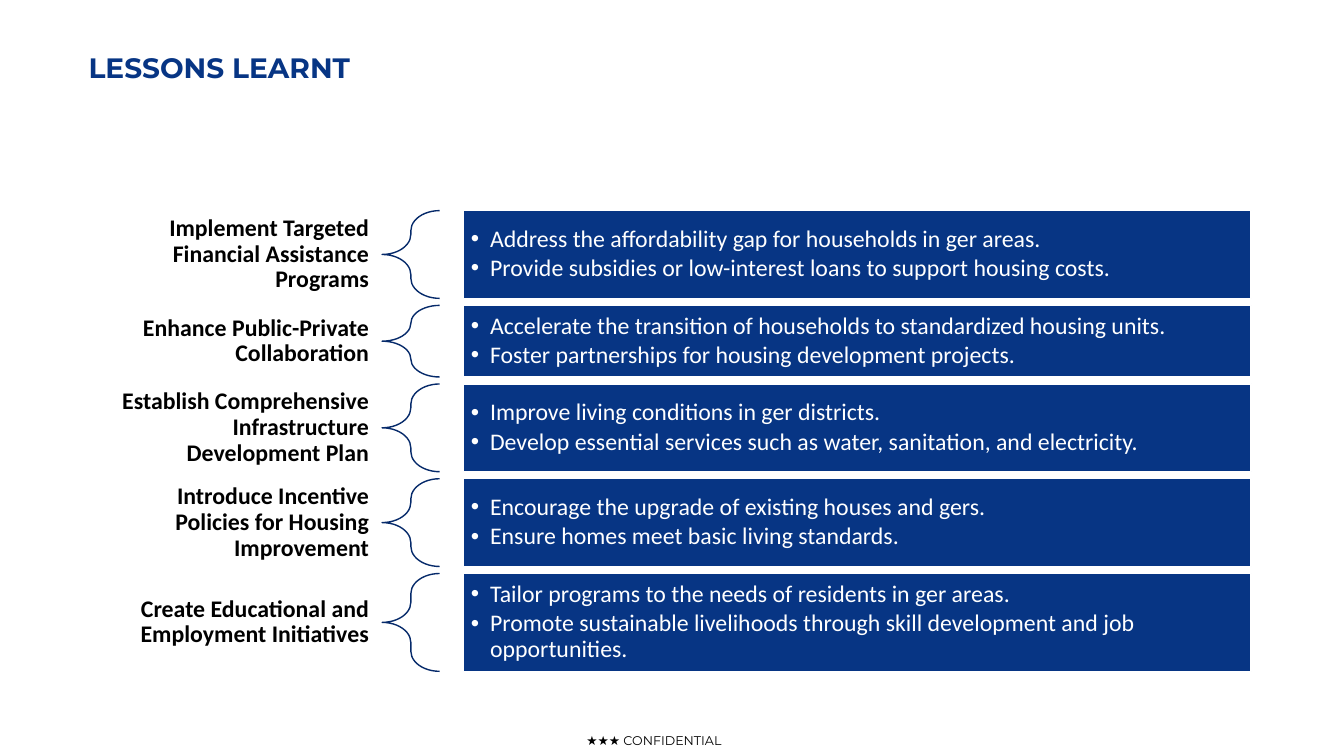
from lxml import etree
from pptx import Presentation
from pptx.dml.color import RGBColor
from pptx.enum.shapes import MSO_SHAPE
from pptx.enum.text import MSO_ANCHOR, PP_ALIGN
from pptx.oxml.ns import qn
from pptx.util import Inches, Pt

BRACE, RECTANGLE = MSO_SHAPE.LEFT_BRACE, MSO_SHAPE.RECTANGLE
TOP, MIDDLE = MSO_ANCHOR.TOP, MSO_ANCHOR.MIDDLE
LEFT, CENTER, RIGHT = PP_ALIGN.LEFT, PP_ALIGN.CENTER, PP_ALIGN.RIGHT

COLORS = {"navy": "073584", "brace": "062A6A", "white": "FFFFFF", "black": "000000"}
FONTS = {
    "title": {"name": "Montserrat", "size": Pt(20), "bold": True},
    "footer": {"name": "Montserrat", "size": Pt(9), "bold": False},
    "label": {"name": "Calibri", "size": Pt(17), "bold": True},
    "bullet": {"name": "Calibri", "size": Pt(17), "bold": False},
}

ROW_GAP = 0.07
LABEL_WIDTH, BRACE_WIDTH, PANEL_OFFSET = 2.87, 0.57, 3.68

# Row height, label, bullet points
LESSONS = [
    (0.87, "Implement Targeted Financial Assistance Programs",
     ["Address the affordability gap for households in ger areas.",
      "Provide subsidies or low-interest loans to support housing costs."]),
    (0.71, "Enhance Public-Private Collaboration",
     ["Accelerate the transition of households to standardized housing units.",
      "Foster partnerships for housing development projects."]),
    (0.87, "Establish Comprehensive Infrastructure Development Plan",
     ["Improve living conditions in ger districts.",
      "Develop essential services such as water, sanitation, and electricity."]),
    (0.87, "Introduce Incentive Policies for Housing Improvement",
     ["Encourage the upgrade of existing houses and gers.",
      "Ensure homes meet basic living standards."]),
    (0.97, "Create Educational and Employment Initiatives",
     ["Tailor programs to the needs of residents in ger areas.",
      "Promote sustainable livelihoods through skill development and job opportunities."]),
]


def rgb(color):
    return RGBColor.from_string(COLORS[color])


def set_frame(frame, anchor, inset_x, inset_y):
    values = {"word_wrap": True, "vertical_anchor": anchor,
              "margin_left": Inches(inset_x), "margin_right": Inches(inset_x),
              "margin_top": Inches(inset_y), "margin_bottom": Inches(inset_y)}
    for name, value in values.items():
        setattr(frame, name, value)


def write(paragraph, text, style, color, **layout):
    paragraph.text = text
    for name, value in layout.items():
        setattr(paragraph, name, value)
    for name, value in FONTS[style].items():
        setattr(paragraph.font, name, value)
    paragraph.font.color.rgb = rgb(color)


def add_text(slide, box, text, style, color, alignment, anchor=TOP,
             insets=(0.1, 0.05), **layout):
    shape = slide.shapes.add_textbox(*map(Inches, box))
    set_frame(shape.text_frame, anchor, *insets)
    write(shape.text_frame.paragraphs[0], text, style, color,
          alignment=alignment, **layout)


def add_shape(slide, kind, box, line):
    shape = slide.shapes.add_shape(kind, *map(Inches, box))
    shape.shadow.inherit = False
    shape.line.color.rgb = rgb(line)
    shape.line.width = Pt(1)
    return shape


def add_bullet(paragraph):
    properties = paragraph._p.get_or_add_pPr()
    properties.set("marL", str(Inches(0.19)))
    properties.set("indent", str(-Inches(0.19)))
    etree.SubElement(properties, qn("a:buFont"), typeface="Arial")
    etree.SubElement(properties, qn("a:buChar"), char="•")


def add_panel(slide, box, points):
    panel = add_shape(slide, RECTANGLE, box, "white")
    panel.fill.solid()
    panel.fill.fore_color.rgb = rgb("navy")
    frame = panel.text_frame
    set_frame(frame, MIDDLE, 0.07, 0.07)
    for index, point in enumerate(points):
        paragraph = frame.add_paragraph() if index else frame.paragraphs[0]
        add_bullet(paragraph)
        write(paragraph, point, "bullet", "white", alignment=LEFT, level=1,
              line_spacing=0.9, space_after=Pt(2.5))


def add_lesson(slide, box, label, points):
    left, top, width, height = box
    # Label
    add_text(slide, (left, top, LABEL_WIDTH, height), label, "label", "black",
             RIGHT, MIDDLE, (0.13, 0.05), line_spacing=0.9)
    # Brace
    brace = add_shape(slide, BRACE, (left + LABEL_WIDTH, top, BRACE_WIDTH, height), "brace")
    brace.fill.background()
    brace.adjustments[0] = 0.35
    brace.adjustments[1] = 0.5
    # Bullet panel
    add_panel(slide, (left + PANEL_OFFSET, top, width - PANEL_OFFSET, height), points)


def add_lessons(slide, left, top, width):
    for height, label, points in LESSONS:
        add_lesson(slide, (left, top, width, height), label, points)
        top += height + ROW_GAP


def main():
    presentation = Presentation()
    presentation.slide_width = Inches(13.33)
    presentation.slide_height = Inches(7.5)
    slide = presentation.slides.add_slide(presentation.slide_layouts[6])
    # Footer, lesson rows, title
    add_text(slide, (5.65, 7.27, 1.67, 0.15), "★★★ CONFIDENTIAL", "footer", "black",
             CENTER, insets=(0, 0))
    add_lessons(slide, 0.92, 2.09, 11.49)
    add_text(slide, (0.78, 0.45, 9.46, 0.44), "LESSONS LEARNT", "title", "navy", LEFT)
    presentation.save("out.pptx")


if __name__ == "__main__":
    main()
